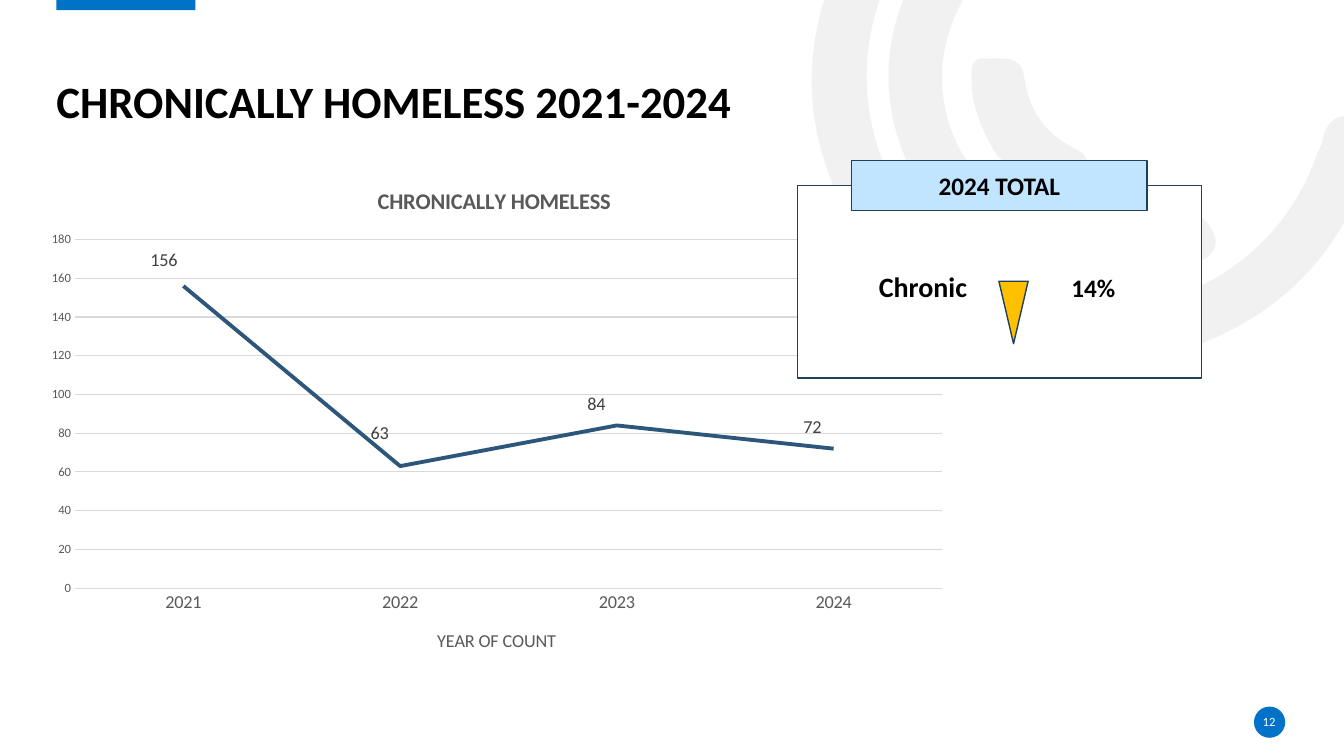
import dataclasses

import lxml.etree
import pptx
import pptx.chart.data
import pptx.dml.color
import pptx.enum.chart
import pptx.enum.shapes
import pptx.enum.text
import pptx.oxml
import pptx.oxml.ns
import pptx.util

TITLE = "CHRONICALLY HOMELESS 2021-2024"
CHART_TITLE = "CHRONICALLY HOMELESS"
AXIS_TITLE = "YEAR OF COUNT"
COUNTS = {"2021": 156, "2022": 63, "2023": 84, "2024": 72}
LABEL_SHIFTS = [(-2.1, -5), (-2.2, -6.4), (-2.2, -4), (-2.3, -4.2)]
PLOT = {"x": 4.5, "y": 14.4, "w": 93.5, "h": 68.5}
CHART_TITLE_AT = {"x": 36.7, "y": 3.1}
AXIS_TITLE_AT = {"x": 43.2, "y": 90.2}

COLUMNS, ROWS = 40 / 3, 7.5
BOX = {
    "tab": (0.56, -0.02, 1.38, 0.12),
    "badge": (12.44, 7.01, 0.31, 0.31),
    "number": (12.43, 7.06, 0.32, 0.2),
    "title": (0.56, 0.26, 12.19, 1.01),
    "chart": (0.33, 1.65, 9.2, 5.05),
    "panel": (7.91, 1.84, 4.01, 1.91),
    "header": (8.45, 1.59, 2.93, 0.5),
    "arrow": (9.91, 2.79, 0.29, 0.62),
    "group": (8.62, 2.62, 1.15, 0.44),
    "change": (10.53, 2.65, 0.74, 0.4),
}
ARCS = [
    ((8.51, 2.29), [
        (7.99, 1.49, 7.87, 0.5, 8.38, -0.5), (8.9, -1.52, 9.76, -2.03, 10.9, -2.07),
        (11.05, -2.07, 11.21, -2.1, 11.31, -1.95), (11.44, -1.75, 11.27, -1.54, 10.98, -1.54),
        (9.67, -1.54, 8.65, -0.59, 8.6, 0.68), (8.56, 1.81, 9.36, 2.81, 10.46, 3.02),
        (11.6, 3.24, 12.7, 2.61, 13.07, 1.52), (13.09, 1.48, 13.11, 1.44, 13.12, 1.4),
        (13.16, 1.19, 13.27, 1.11, 13.49, 1.17), (13.73, 1.24, 13.67, 1.41, 13.61, 1.56),
        (13.34, 2.45, 12.78, 3.07, 11.91, 3.41), (10.7, 3.87, 9.36, 3.45, 8.51, 2.29)]),
    ((9.22, 1.99), [
        (8.62, 1.15, 8.69, 0.07, 9.4, -0.68), (9.51, -0.79, 9.62, -0.95, 9.8, -0.78),
        (9.95, -0.64, 9.97, -0.5, 9.79, -0.32), (9.25, 0.26, 9.2, 1.08, 9.65, 1.68),
        (10.08, 2.29, 10.88, 2.49, 11.61, 2.15), (11.82, 2.05, 11.93, 2.12, 12.03, 2.29),
        (12.13, 2.5, 11.97, 2.56, 11.83, 2.63), (10.96, 3.1, 9.83, 2.82, 9.22, 1.99)]),
    ((9.87, 1.51), [
        (9.75, 1.3, 9.64, 1.07, 9.64, 0.82), (9.64, 0.73, 9.61, 0.57, 9.76, 0.58),
        (9.92, 0.59, 10.13, 0.53, 10.16, 0.76), (10.21, 1.1, 10.36, 1.32, 10.67, 1.48),
        (10.88, 1.57, 10.76, 1.76, 10.72, 1.89), (10.68, 2.06, 10.55, 1.98, 10.45, 1.94),
        (10.21, 1.87, 10.03, 1.7, 9.87, 1.51)]),
]


@dataclasses.dataclass(frozen=True)
class Theme:
    font: str = "Calibri"
    ink: str = "000000"
    white: str = "FFFFFF"
    blue: str = "0072C7"
    arc: str = "E7E6E6"
    outline: str = "21405A"
    header: str = "C1E4FF"
    arrow: str = "FFC000"
    series: str = "2C567A"
    axis: str = "595959"
    grid: str = "D9D9D9"
    label: str = "404040"
    title_size: int = 32
    group_size: int = 20
    header_size: int = 18
    chart_title_size: int = 16
    chart_size: int = 13
    small_size: int = 9


T = Theme()
MIDDLE = pptx.enum.text.MSO_ANCHOR.MIDDLE
BOTTOM = pptx.enum.text.MSO_ANCHOR.BOTTOM
LEFT = pptx.enum.text.PP_ALIGN.LEFT
CENTER = pptx.enum.text.PP_ALIGN.CENTER
SHAPE = pptx.enum.shapes.MSO_SHAPE
qn = pptx.oxml.ns.qn

prs = pptx.Presentation()
prs.slide_width, prs.slide_height = pptx.util.Inches(COLUMNS), pptx.util.Inches(ROWS)
s = prs.slides.add_slide(prs.slide_layouts[5])


def place(box):
    cells = zip(box, (COLUMNS, ROWS) * 2, (prs.slide_width, prs.slide_height) * 2)
    return [round(value / count * full) for value, count, full in cells]


def apply(obj, **values):
    for name, value in values.items():
        setattr(obj, name, value)


def set_font(font, size, color, bold=False):
    apply(font, name=T.font, size=pptx.util.Pt(size), bold=bold)
    font.color.rgb = pptx.dml.color.RGBColor.from_string(color)


def set_line(line, color, width):
    line.color.rgb = pptx.dml.color.RGBColor.from_string(color)
    line.width = pptx.util.Pt(width)


def set_fill(sp, color, outline=None):
    sp.shadow.inherit = False
    sp.fill.solid()
    sp.fill.fore_color.rgb = pptx.dml.color.RGBColor.from_string(color)
    if outline:
        set_line(sp.line, outline, 1)
    else:
        sp.line.fill.background()


def write(sp, text, size, color, bold=True, align=LEFT, anchor=None, inset=None):
    tf = sp.text_frame
    apply(tf, word_wrap=True, auto_size=pptx.enum.text.MSO_AUTO_SIZE.NONE)
    if anchor is not None:
        tf.vertical_anchor = anchor
    if inset is not None:
        apply(tf, margin_left=inset, margin_right=inset, margin_top=inset, margin_bottom=inset)
    p = tf.paragraphs[0]
    p.alignment = align
    r = p.add_run()
    r.text = text
    set_font(r.font, size, color, bold)
    return p


def add_box(name, kind, color, outline=None):
    sp = s.shapes.add_shape(kind, *place(BOX[name]))
    set_fill(sp, color, outline)
    return sp


def add_text(name, *args, **kwargs):
    write(s.shapes.add_textbox(*place(BOX[name])), *args, **kwargs)


def add_arc(start, bends):
    builder = s.shapes.build_freeform(*place(start), scale=1.0)
    builder.add_line_segments([place(bend[4:]) for bend in bends], close=True)
    sp = builder.convert_to_shape()
    set_fill(sp, T.arc)
    tint = sp.fill._xPr.find(".//" + qn("a:srgbClr"))
    lxml.etree.SubElement(tint, qn("a:alpha")).set("val", "53000")
    for side, bend in zip(list(sp._element.iter(qn("a:lnTo"))), bends):
        bezier = lxml.etree.Element(qn("a:cubicBezTo"))
        for i in (0, 2, 4):
            x, y = place(bend[i:i + 2])
            pt = lxml.etree.SubElement(bezier, qn("a:pt"))
            pt.set("x", str(x - sp.left))
            pt.set("y", str(y - sp.top))
        side.getparent().replace(side, bezier)


def set_layout(parent, index, modes, shares):
    for old in parent.findall(qn("c:layout")):
        parent.remove(old)
    layout = pptx.oxml.parse_xml(f"<c:layout {pptx.oxml.ns.nsdecls('c')}><c:manualLayout/></c:layout>")
    values = modes | {tag: round(share / 100, 4) for tag, share in shares.items()}
    for tag, value in values.items():
        lxml.etree.SubElement(layout[0], qn(f"c:{tag}")).set("val", str(value))
    parent.insert(index, layout)


EDGE = {"xMode": "edge", "yMode": "edge"}


def set_chart_title(title, text, size, bold, at):
    p = title.text_frame.paragraphs[0]
    r = p.add_run()
    r.text = text
    set_font(r.font, size, T.axis, bold)
    set_layout(title._element, 1, EDGE, at)


def add_count_chart():
    data = pptx.chart.data.CategoryChartData()
    data.categories = list(COUNTS)
    data.add_series("Series 1", list(COUNTS.values()))
    chart = s.shapes.add_chart(pptx.enum.chart.XL_CHART_TYPE.LINE, *place(BOX["chart"]), data).chart
    set_font(chart.font, T.chart_size, T.axis)
    apply(chart, has_legend=False, has_title=True)
    set_chart_title(chart.chart_title, CHART_TITLE, T.chart_title_size, True, CHART_TITLE_AT)
    set_layout(chart._chartSpace.chart.plotArea, 0, {"layoutTarget": "inner"} | EDGE, PLOT)
    cat, val = chart.category_axis, chart.value_axis
    for axis, size in ((cat, T.chart_size), (val, T.small_size)):
        axis.major_tick_mark = axis.minor_tick_mark = pptx.enum.chart.XL_TICK_MARK.NONE
        set_font(axis.tick_labels.font, size, T.axis)
    set_line(cat.format.line, T.grid, 0.75)
    set_chart_title(cat.axis_title, AXIS_TITLE, T.chart_size, False, AXIS_TITLE_AT)
    apply(val, minimum_scale=0, maximum_scale=180, major_unit=20, has_major_gridlines=True)
    val.format.line.fill.background()
    set_line(val.major_gridlines.format.line, T.grid, 0.75)
    plot = chart.plots[0]
    plot.vary_by_categories = False
    series = plot.series[0]
    series.smooth = False
    set_line(series.format.line, T.series, 2.75)
    for i, (dx, dy) in enumerate(LABEL_SHIFTS):
        label = series.points[i].data_label
        set_font(label.font, T.chart_size, T.label)
        label.position = pptx.enum.chart.XL_LABEL_POSITION.CENTER
        set_layout(label._dLbl, 1, {}, {"x": dx, "y": dy})
    for leader in series._element.iter(qn("c:showLeaderLines")):
        leader.set("val", "0")


for start, bends in ARCS:
    add_arc(start, bends)
add_box("tab", SHAPE.RECTANGLE, T.blue)
add_box("badge", SHAPE.OVAL, T.blue)
title = s.shapes.title
apply(title, **dict(zip(("left", "top", "width", "height"), place(BOX["title"]))))
write(title, TITLE, T.title_size, T.ink, anchor=BOTTOM, inset=0).line_spacing = 0.9
s.shapes._spTree.append(title._element)
add_text("number", "12", T.small_size, T.white, bold=False, align=CENTER, anchor=MIDDLE, inset=0)
add_count_chart()
add_box("panel", SHAPE.RECTANGLE, T.white, T.outline)
header = add_box("header", SHAPE.RECTANGLE, T.header, T.outline)
write(header, "2024 TOTAL", T.header_size, T.ink, align=CENTER, anchor=MIDDLE)
add_box("arrow", SHAPE.ISOSCELES_TRIANGLE, T.arrow, T.outline).rotation = 180
add_text("group", "Chronic", T.group_size, T.ink)
add_text("change", "14%", T.header_size, T.ink)
prs.save("out.pptx")
